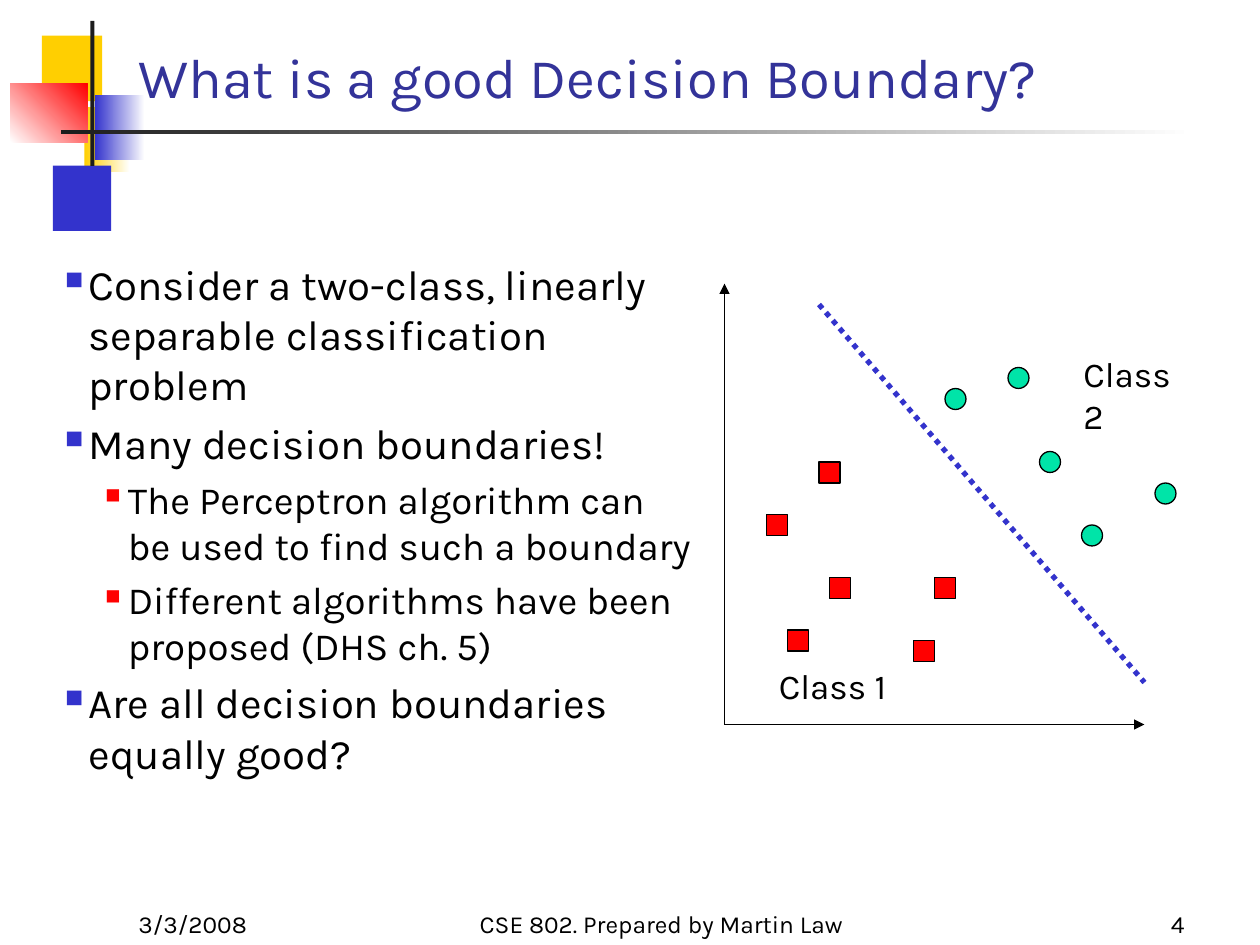
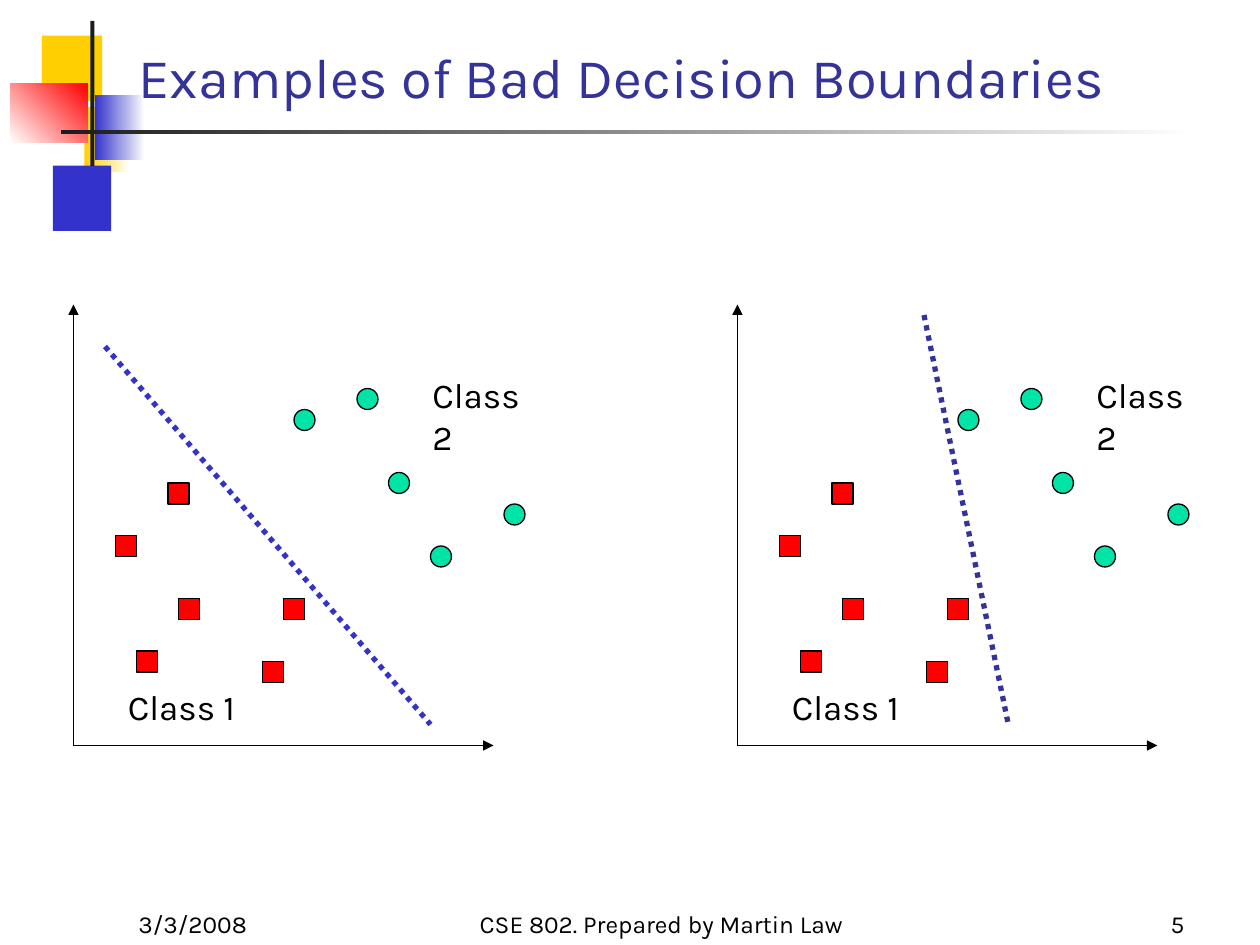
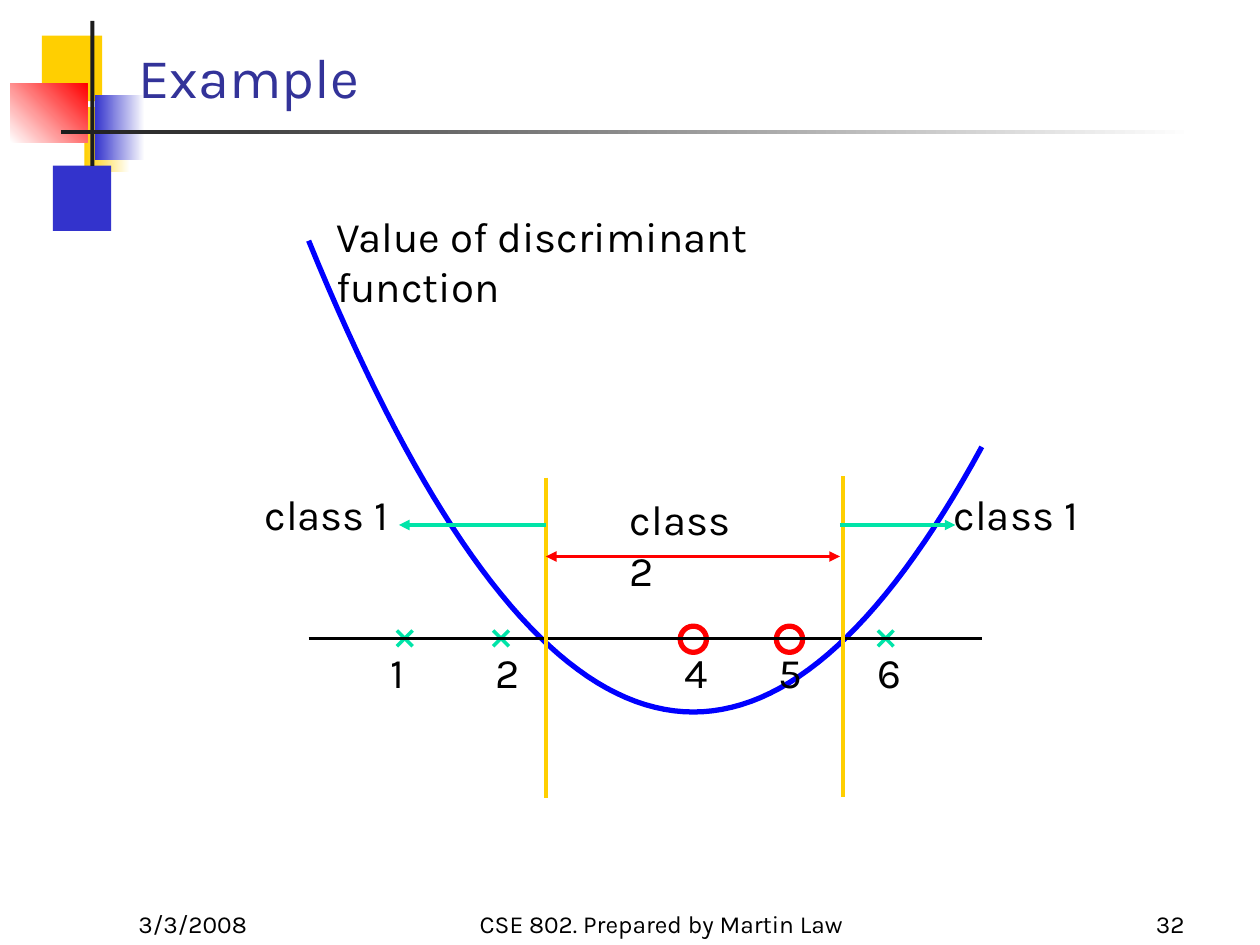
from dataclasses import dataclass

from pptx import Presentation
from pptx.dml.color import RGBColor
from pptx.enum.dml import MSO_LINE
from pptx.enum.shapes import MSO_CONNECTOR, MSO_SHAPE
from pptx.enum.text import MSO_ANCHOR, PP_ALIGN
from pptx.oxml.ns import qn
from pptx.util import Pt
from lxml.etree import SubElement


@dataclass(frozen=True)
class Theme:
    font: str = "Karla"
    ink: str = "000000"
    paper: str = "FFFFFF"
    heading: str = "333399"
    blue: str = "3333CC"
    curve: str = "0000FF"
    gold: str = "FFCF01"
    red: str = "FF0000"
    green: str = "00E4A8"
    charcoal: str = "1C1C1C"
    title_size: int = 32
    body_size: int = 24
    sub_size: int = 22
    label_size: int = 20
    footer_size: int = 14


THEME = Theme()

BANDS = [
    ((24, 20.4, 34.4, 37.4), [THEME.gold], 0),
    ((48.2, 61.2, 26, 37.4), [THEME.gold, THEME.paper], 0),
    ((30.2, 94.6, 33.4, 37.4), [THEME.blue], 0),
    ((54.2, 54, 28.6, 37.4), [THEME.blue, THEME.paper], 0),
    ((5.8, 47.9, 44.2, 33.4), [THEME.paper, THEME.red], 45),
    ((51.7, 12, 2.2, 82.8), [THEME.charcoal], 0),
    ((34.6, 74.2, 648, 2.2), [THEME.charcoal, THEME.paper], 0),
]
DATE = "3/3/2008"
CREDIT = "CSE 802. Prepared by Martin Law"

POINTS = [
    (0, "Consider a two-class, linearly separable classification problem"),
    (0, "Many decision boundaries!"),
    (1, "The Perceptron algorithm can be used to find such a boundary"),
    (1, "Different algorithms have been proposed (DHS ch. 5)"),
    (0, "Are all decision boundaries equally good?"),
]
LEVELS = [
    dict(size=THEME.body_size, indent=13.5, hang=13.5, bullet=THEME.blue, scale=60),
    dict(size=THEME.sub_size, indent=36, hang=13, bullet=THEME.red, scale=55),
]

CLASS_2 = [(162, -204), (180, -156), (246, -138), (126, -192), (204, -114)]
CLASS_1 = [(24, -120), (120, -84), (108, -48), (60, -84), (36, -54), (54, -150)]
CLASS_LABELS = [("Class 1", 24, -38), ("Class 2", 198, -216)]
MARKER = 12

GOOD_PLOT = [((414, 414), (54, -240), (240, -24), THEME.blue)]
BAD_PLOTS = [
    ((42, 426), (18, -228), (204, -12), THEME.blue),
    ((421.4, 426), (106.6, -246), (154.8, -12), THEME.heading),
]

AXIS_START, AXIS_Y, X_UNIT, Y_UNIT = 176.4, 364.8, 54.95, 25.25
X_RANGE = 7
CROSSES = [1, 2, 6]
RINGS = [4, 5]
NUMBERS = [("1", 216), ("2", 276), ("4", 384), ("5", 438), ("6", 494.6)]
REGIONS = [("class 2", 352.8, 278.6), ("class 1", 537.8, 275.8), ("class 1", 144, 275.8)]
THRESHOLDS = [(312, 273), (481.7, 272.2)]
SPANS = [
    ((312, 300), (228, 300), THEME.green, False),
    ((480, 300), (546, 300), THEME.green, False),
    ((312, 318), (480, 318), THEME.red, True),
]


def rgb(code):
    return RGBColor.from_string(code)


def add_text(slide, text, box, size=THEME.body_size, color=THEME.ink,
             align=PP_ALIGN.LEFT, anchor=MSO_ANCHOR.TOP):
    frame = slide.shapes.add_textbox(*map(Pt, box)).text_frame
    frame.word_wrap = True
    frame.vertical_anchor = anchor
    items = [(None, text)] if isinstance(text, str) else text
    for i, (level, words) in enumerate(items):
        paragraph = frame.add_paragraph() if i else frame.paragraphs[0]
        paragraph.alignment = align
        run = paragraph.add_run()
        run.text = words
        run.font.name = THEME.font
        run.font.size = Pt(size if level is None else LEVELS[level]["size"])
        run.font.color.rgb = rgb(color)
        if level is not None:
            add_bullet(paragraph, level)


def add_bullet(paragraph, level):
    look = LEVELS[level]
    paragraph.level = level
    paragraph.space_before = Pt(look["size"] * 0.2)
    properties = paragraph._p.get_or_add_pPr()
    properties.set("marL", str(Pt(look["indent"])))
    properties.set("indent", str(-Pt(look["hang"])))
    SubElement(SubElement(properties, qn("a:buClr")), qn("a:srgbClr"), val=look["bullet"])
    SubElement(properties, qn("a:buSzPct"), val=str(look["scale"] * 1000))
    SubElement(properties, qn("a:buChar"), char="■")


def add_line(slide, start, end, color=THEME.ink, width=1, dash=None, head=False, tail=False):
    connector = slide.shapes.add_connector(MSO_CONNECTOR.STRAIGHT, *map(Pt, (*start, *end)))
    line = connector.line
    line.color.rgb = rgb(color)
    line.width = Pt(width)
    if dash:
        line.dash_style = dash
    for wanted, tag in ((head, "a:headEnd"), (tail, "a:tailEnd")):
        if wanted:
            SubElement(line._get_or_add_ln(), qn(tag), type="triangle")
    SubElement(connector._element.spPr, qn("a:effectLst"))


def add_shape(slide, kind, box, fills=(), angle=0, outline=None, width=0.75):
    shape = slide.shapes.add_shape(kind, *map(Pt, box))
    shape.shadow.inherit = False
    if len(fills) == 2:
        shape.fill.gradient()
        shape.fill.gradient_angle = angle
        for stop, color in zip(shape.fill.gradient_stops, fills):
            stop.color.rgb = rgb(color)
    elif fills:
        shape.fill.solid()
        shape.fill.fore_color.rgb = rgb(fills[0])
    else:
        shape.fill.background()
    if outline:
        shape.line.color.rgb = rgb(outline)
        shape.line.width = Pt(width)
    else:
        shape.line.fill.background()


def start_slide(deck, title, number):
    slide = deck.slides.add_slide(deck.slide_layouts[6])
    for box, fills, angle in BANDS:
        add_shape(slide, MSO_SHAPE.RECTANGLE, box, fills, angle)
    for words, left, width, align in (
        (DATE, 72, 150, PP_ALIGN.LEFT),
        (CREDIT, 264, 228, PP_ALIGN.CENTER),
        (number, 534, 150, PP_ALIGN.RIGHT),
    ):
        add_text(slide, words, (left, 516, width, 24), size=THEME.footer_size,
                 align=align, anchor=MSO_ANCHOR.BOTTOM)
    add_text(slide, title, (72, 6, 632, 60), size=THEME.title_size,
             color=THEME.heading, anchor=MSO_ANCHOR.BOTTOM)
    return slide


def add_plot(slide, origin, boundary_start, boundary_end, boundary_color):
    def place(x, y):
        return origin[0] + x, origin[1] + y

    for tip in ((0, -252), (240, 0)):
        add_line(slide, origin, place(*tip), tail=True)
    for kind, color, samples in (
        (MSO_SHAPE.OVAL, THEME.green, CLASS_2),
        (MSO_SHAPE.RECTANGLE, THEME.red, CLASS_1),
    ):
        for sample in samples:
            add_shape(slide, kind, (*place(*sample), MARKER, MARKER), [color], outline=THEME.ink)
    for words, x, y in CLASS_LABELS:
        add_text(slide, words, (*place(x, y), 76.3, 31), size=THEME.label_size)
    add_line(slide, place(*boundary_start), place(*boundary_end), boundary_color, 3,
             dash=MSO_LINE.ROUND_DOT)


def axis_x(x):
    return AXIS_START + x * X_UNIT


def discriminant(x):
    return (2 * (x - 4) ** 2 - 5) / 3


def add_curve(slide):
    vertices = [
        (Pt(axis_x(step / 10)), Pt(AXIS_Y - discriminant(step / 10) * Y_UNIT))
        for step in range(X_RANGE * 10 + 1)
    ]
    builder = slide.shapes.build_freeform(*vertices[0])
    builder.add_line_segments(vertices[1:], close=False)
    curve = builder.convert_to_shape()
    curve.shadow.inherit = False
    curve.fill.background()
    curve.line.color.rgb = rgb(THEME.curve)
    curve.line.width = Pt(3)


def add_discriminant_example(slide):
    arm, ring = 4.5, 15
    for x in map(axis_x, CROSSES):
        for rise in (arm, -arm):
            add_line(slide, (x - arm, AXIS_Y - rise), (x + arm, AXIS_Y + rise), THEME.green, 2)
    for x in map(axis_x, RINGS):
        add_shape(slide, MSO_SHAPE.OVAL, (x - ring / 2, AXIS_Y + 0.5 - ring / 2, ring, ring),
                  outline=THEME.red, width=3)
    add_curve(slide)
    add_line(slide, (AXIS_START, AXIS_Y), (axis_x(X_RANGE), AXIS_Y), width=0)
    add_text(slide, "Value of discriminant function", (185, 116.6, 329, 36))
    for number, left in NUMBERS:
        add_text(slide, number, (left, 366, 27.4, 36))
    for x, top in THRESHOLDS:
        add_line(slide, (x, top), (x, top + 183), THEME.gold, 2)
    for words, left, top in REGIONS:
        add_text(slide, words, (left, top, 85.7, 36))
    for start, end, color, both_ways in SPANS:
        add_line(slide, start, end, color, 2, head=both_ways, tail=True)


def main():
    deck = Presentation()
    deck.slide_width, deck.slide_height = Pt(720), Pt(540)

    good = start_slide(deck, "What is a good Decision Boundary?", "4")
    add_text(good, POINTS, (30, 144, 372, 366))
    bad = start_slide(deck, "Examples of Bad Decision Boundaries", "5")
    for slide, plots in ((good, GOOD_PLOT), (bad, BAD_PLOTS)):
        for plot in plots:
            add_plot(slide, *plot)

    add_discriminant_example(start_slide(deck, "Example", "32"))
    deck.save("out.pptx")


if __name__ == "__main__":
    main()
